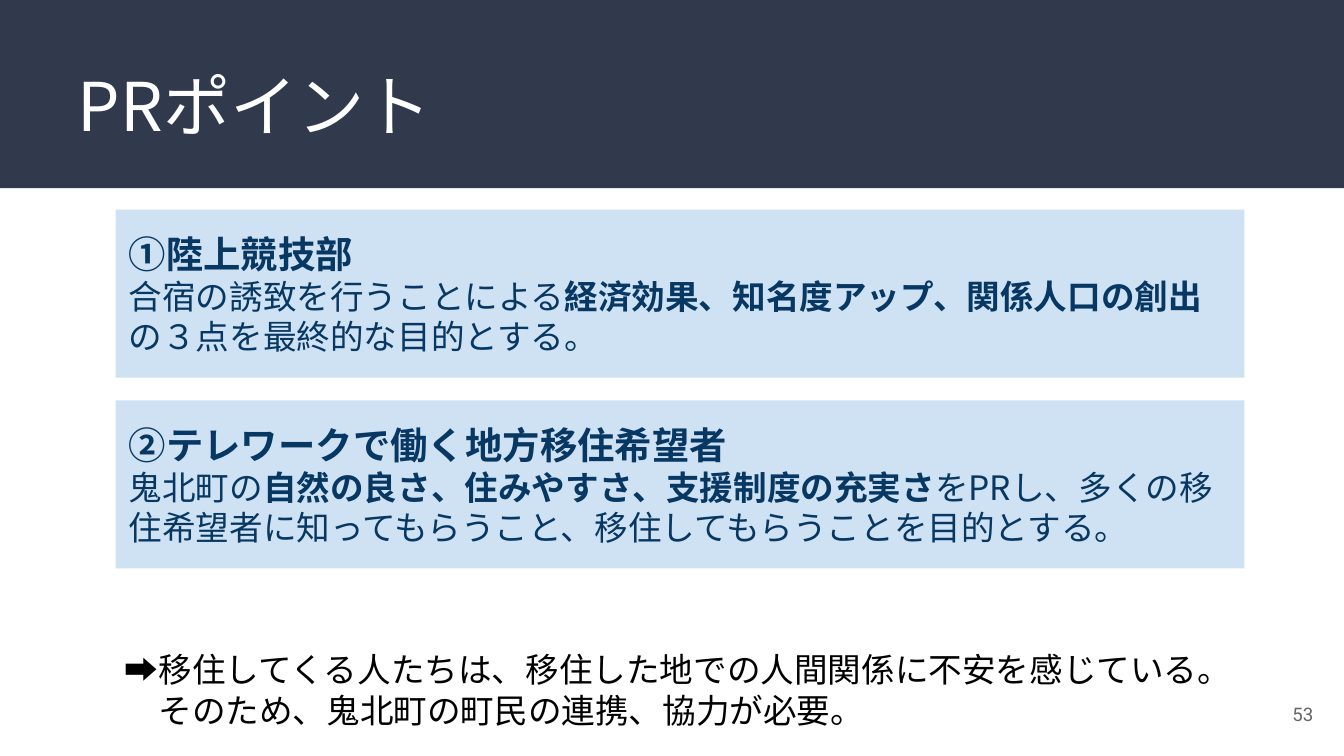
from dataclasses import dataclass

from lxml.etree import SubElement
from pptx import Presentation
from pptx.dml.color import RGBColor
from pptx.enum.shapes import MSO_SHAPE as Preset
from pptx.enum.text import MSO_ANCHOR as Anchor, MSO_AUTO_SIZE as AutoSize, PP_ALIGN as Align
from pptx.oxml.ns import qn
from pptx.util import Inches, Pt

COLORS = {
    "band": "31394D",
    "card": "CFE2F3",
    "navy": "073763",
    "white": "FFFFFF",
    "black": "000000",
    "gray": "666666",
}
JAPANESE = "Noto Sans CJK JP"
LEFT, WIDTH = 0.86, 8.4
CARD_TOP, CARD_HEIGHT, CARD_STEP = 1.56, 1.25, 1.42


@dataclass
class Run:
    text: str
    size: float
    color: str
    bold: bool = False
    font: str = JAPANESE


@dataclass
class Card:
    heading: str
    before: str
    emphasis: str
    after: str


CARDS = [
    Card("①陸上競技部", "合宿の誘致を行うことによる",
         "経済効果、知名度アップ、関係人口の創出", "の３点を最終的な目的とする。"),
    Card("②テレワークで働く地方移住希望者", "鬼北町の",
         "自然の良さ、住みやすさ、支援制度の充実さ",
         "をPRし、多くの移住希望者に知ってもらうこと、移住してもらうことを目的とする。"),
]


def color(name: str) -> RGBColor:
    return RGBColor.from_string(COLORS[name])


def write(shape, paragraphs: list[list[Run]], anchor=Anchor.MIDDLE, align=Align.LEFT,
          insets=(0.1, 0.1, 0.1, 0.1)) -> None:
    frame = shape.text_frame
    frame.word_wrap = True
    frame.auto_size = AutoSize.NONE
    frame.vertical_anchor = anchor
    (frame.margin_left, frame.margin_top,
     frame.margin_right, frame.margin_bottom) = map(Inches, insets)
    for index, runs in enumerate(paragraphs):
        paragraph = frame.add_paragraph() if index else frame.paragraphs[0]
        paragraph.alignment = align
        for item in runs:
            run = paragraph.add_run()
            run.text = item.text
            run.font.size = Pt(item.size)
            run.font.bold = item.bold
            run.font.color.rgb = color(item.color)
            run.font.name = item.font
            SubElement(run.font._element, qn("a:ea")).set("typeface", item.font)


def add_panel(slide, left: float, top: float, width: float, height: float, fill: str):
    shape = slide.shapes.add_shape(
        Preset.RECTANGLE, Inches(left), Inches(top), Inches(width), Inches(height))
    shape.shadow.inherit = False
    shape.fill.solid()
    shape.fill.fore_color.rgb = color(fill)
    shape.line.fill.background()
    return shape


def add_text_box(slide, left: float, top: float, width: float, height: float):
    return slide.shapes.add_textbox(Inches(left), Inches(top), Inches(width), Inches(height))


def add_title(slide, text: str) -> None:
    title = slide.shapes.title
    title.left, title.top = Inches(0.48), Inches(0.38)
    title.width, title.height = Inches(9.18), Inches(0.97)
    write(title, [[Run(text, 36, "white")]], anchor=Anchor.TOP)
    slide.shapes._spTree.append(title._element)


def add_card(slide, card: Card, top: float) -> None:
    panel = add_panel(slide, LEFT, top, WIDTH, CARD_HEIGHT, "card")
    write(panel, [
        [Run(card.heading, 20, "navy", True)],
        [Run(card.before, 18, "navy"), Run(card.emphasis, 18, "navy", True),
         Run(card.after, 18, "navy")],
    ])


def main() -> None:
    presentation = Presentation()
    presentation.slide_width = Inches(10)
    presentation.slide_height = Inches(10 * 9 / 16)
    slide = presentation.slides.add_slide(presentation.slide_layouts[5])

    add_panel(slide, 0, 0, 10, 1.4, "band")
    add_title(slide, "PRポイント")

    number = add_text_box(slide, 9.27, 5.1, 0.6, 0.43)
    write(number, [[Run("53", 10, "gray", font="Roboto")]], align=Align.RIGHT)

    conclusion = add_text_box(slide, LEFT, 4.68, WIDTH, 0.85)
    write(conclusion, [
        [Run("➡移住してくる人たちは、移住した地での人間関係に不安を感じている。", 18, "black")],
        [Run("　そのため、鬼北町の町民の連携、協力が必要。", 18, "black")],
    ], insets=(0.07, 0.09, 0.07, 0.04))

    for index, card in enumerate(CARDS):
        add_card(slide, card, CARD_TOP + index * CARD_STEP)

    presentation.save("out.pptx")


if __name__ == "__main__":
    main()
